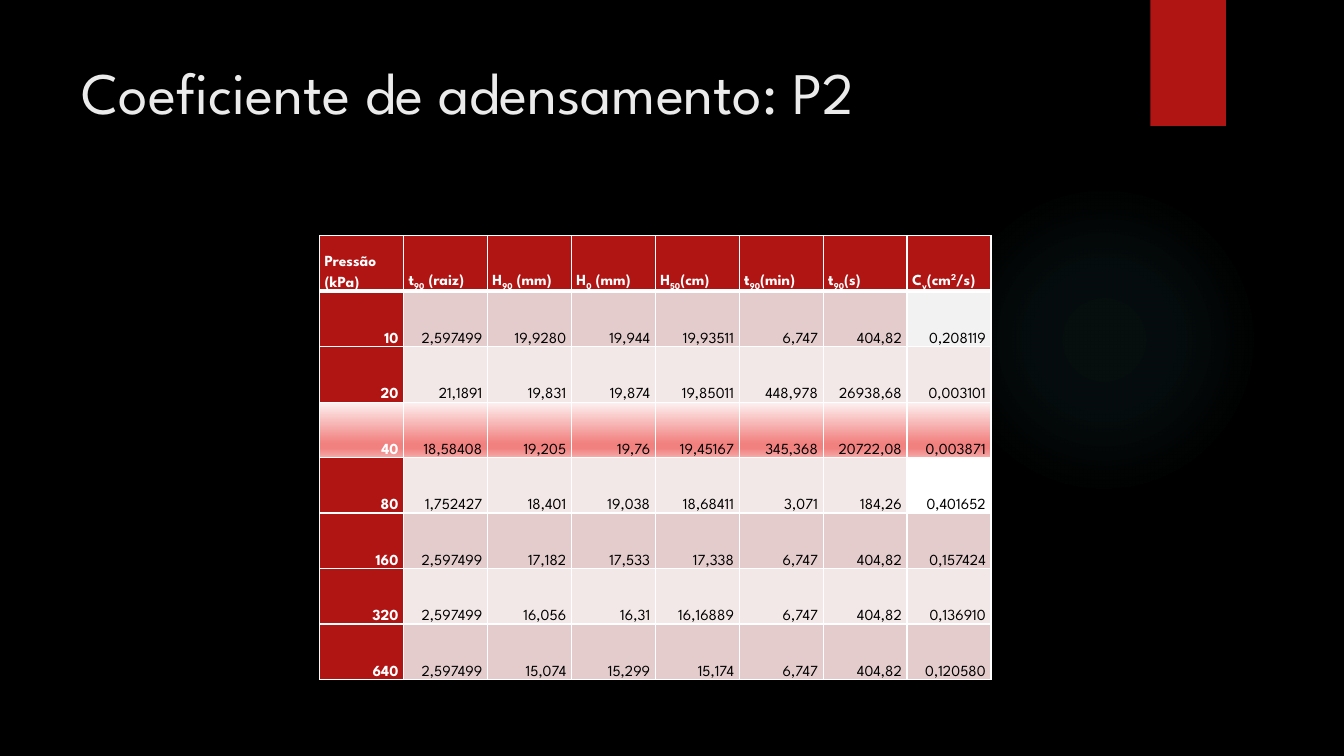
from lxml import etree
from pptx import Presentation
from pptx.dml.color import RGBColor
from pptx.enum.shapes import MSO_SHAPE
from pptx.enum.text import MSO_ANCHOR, PP_ALIGN
from pptx.oxml import parse_xml
from pptx.oxml.ns import nsdecls
from pptx.util import Inches, Pt

FONT = "League Spartan"
RED, WHITE, BLACK = "B01513", "FFFFFF", "000000"
BANDS = ["F2E8E7", "E4CCCC"]
HIGHLIGHT = [(0, "FDF1F1", 100), (74, "F1817F", 100), (83, "F1817F", 100), (100, "F6ABAA", 100)]
GLOW = [(0, "50B9C1", 7), (36, "50B9C1", 6), (69, "50B9C1", 0)]
DOWNWARD = '<a:lin ang="5400000" scaled="0"/>'
FROM_CENTRE = '<a:path path="circle"><a:fillToRect l="50000" t="50000" r="50000" b="50000"/></a:path>'

# Within a heading, "|" parts the runs; "_" starts a subscript and "^" a superscript.
HEADINGS = ["Pressão (kPa)", "t|_90| (raiz)", "H|_90| (mm)", "H|_0| (mm)",
            "H|_50|(cm)", "t|_90|(min)", "t|_90|(s)", "C|_v|(cm|^2|/s)"]
BASELINES = {"_": "-25000", "^": "30000"}
READINGS = [
    ["10", "2,597499", "19,9280", "19,944", "19,93511", "6,747", "404,82", "0,208119"],
    ["20", "21,1891", "19,831", "19,874", "19,85011", "448,978", "26938,68", "0,003101"],
    ["40", "18,58408", "19,205", "19,76", "19,45167", "345,368", "20722,08", "0,003871"],
    ["80", "1,752427", "18,401", "19,038", "18,68411", "3,071", "184,26", "0,401652"],
    ["160", "2,597499", "17,182", "17,533", "17,338", "6,747", "404,82", "0,157424"],
    ["320", "2,597499", "16,056", "16,31", "16,16889", "6,747", "404,82", "0,136910"],
    ["640", "2,597499", "15,074", "15,299", "15,174", "6,747", "404,82", "0,120580"],
]
HIGHLIGHT_ROW = 3
SPECIAL_FILLS = {(1, 7): "F2F2F2", (4, 7): WHITE}


def color(hex_text):
    return RGBColor.from_string(hex_text)


def gradient(stops, direction):
    """Return a gradFill element from (percent, colour, opacity) stops."""
    marks = "".join(
        f'<a:gs pos="{place * 1000}"><a:srgbClr val="{shade}">'
        f'<a:alpha val="{opacity * 1000}"/></a:srgbClr></a:gs>'
        for place, shade, opacity in stops)
    return parse_xml(f'<a:gradFill {nsdecls("a")} rotWithShape="1">'
                     f'<a:gsLst>{marks}</a:gsLst>{direction}</a:gradFill>')


deck = Presentation()
deck.slide_width, deck.slide_height = Inches(13.33), Inches(7.5)
page = deck.slides.add_slide(deck.slide_layouts[5])
page.background.fill.solid()
page.background.fill.fore_color.rgb = color(BLACK)

# Decoration
glow = page.shapes.add_shape(MSO_SHAPE.OVAL, Inches(9.41), Inches(1.83), Inches(3.08), Inches(3.08))
ribbon = page.shapes.add_shape(MSO_SHAPE.RECTANGLE, Inches(11.41), 0, Inches(0.75), Inches(1.25))
for shape in (glow, ribbon):
    shape.shadow.inherit = False
    shape.line.fill.background()
ribbon.fill.solid()
ribbon.fill.fore_color.rgb = color(RED)
glow._element.spPr.insert(2, gradient(GLOW, FROM_CENTRE))

# Title
title = page.shapes.title
title.left, title.top, title.width, title.height = map(Inches, (0.71, 0.5, 10.29, 1.53))
title.text_frame.text = "Coeficiente de adensamento: P2"
title.text_frame.vertical_anchor = MSO_ANCHOR.TOP
para = title.text_frame.paragraphs[0]
para.alignment = PP_ALIGN.LEFT
para.font.name, para.font.size = FONT, Pt(42)
para.font.color.rgb = color("EBEBEB")

# Table
rows = [HEADINGS] + READINGS
table = page.shapes.add_table(len(rows), len(HEADINGS), Inches(3.17), Inches(2.34),
                              Inches(6.66), Inches(4.4)).table
table.horz_banding = False
for r, row in enumerate(rows):
    for c, text in enumerate(row):
        cell = table.cell(r, c)
        cell.vertical_anchor = MSO_ANCHOR.BOTTOM
        cell.margin_left = cell.margin_right = Inches(0.05)
        cell.margin_top = cell.margin_bottom = 0

        para = cell.text_frame.paragraphs[0]
        para.line_spacing = 1.5
        para.alignment = PP_ALIGN.RIGHT if r else PP_ALIGN.LEFT
        is_heading = r == 0 or c == 0
        para.font.name, para.font.size, para.font.bold = FONT, Pt(11), is_heading
        para.font.color.rgb = color(WHITE if is_heading else BLACK)
        for piece in text.split("|"):
            span = para.add_run()
            span.text = piece.lstrip("_^")
            if piece[0] in BASELINES:
                span._r.get_or_add_rPr().set("baseline", BASELINES[piece[0]])

        properties = cell._tc.get_or_add_tcPr()
        for side in "LRTB":
            thick = (r, side) in [(0, "B"), (1, "T")]
            properties.append(parse_xml(
                f'<a:ln{side} {nsdecls("a")} w="{Pt(3 if thick else 1)}"><a:solidFill>'
                f'<a:srgbClr val="{WHITE}"/></a:solidFill></a:ln{side}>'))
        if r == HIGHLIGHT_ROW:
            properties.append(gradient(HIGHLIGHT, DOWNWARD))
        else:
            band = SPECIAL_FILLS.get((r, c), BANDS[r % 2])
            cell.fill.solid()
            cell.fill.fore_color.rgb = color(RED if is_heading else band)

deck.save("out.pptx")
